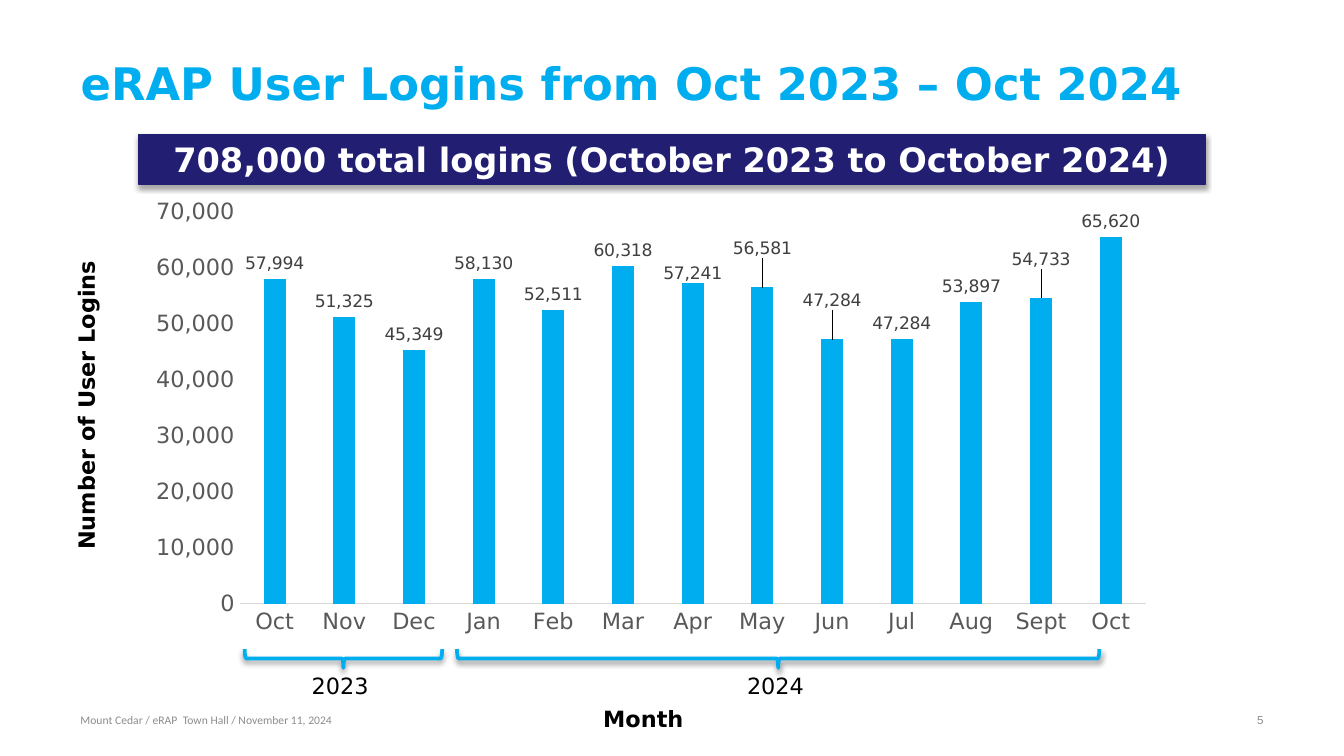
"""Build the slide of monthly eRAP user logins."""
import pptx
import pptx.chart.data
import pptx.dml.color
import pptx.enum.chart
import pptx.enum.shapes
import pptx.enum.text
import pptx.oxml
import pptx.oxml.ns
import pptx.util

Inches, Pt = pptx.util.Inches, pptx.util.Pt
ALIGN = pptx.enum.text.PP_ALIGN
ANCHOR = pptx.enum.text.MSO_ANCHOR
SHAPE = pptx.enum.shapes.MSO_SHAPE
TICK = pptx.enum.chart.XL_TICK_MARK

TITLE = "eRAP User Logins from Oct 2023 – Oct 2024"
BANNER = "708,000 total logins (October 2023 to October 2024)"
LOGINS = [
    ("Oct", 57994), ("Nov", 51325), ("Dec", 45349), ("Jan", 58130), ("Feb", 52511),
    ("Mar", 60318), ("Apr", 57241), ("May", 56581), ("Jun", 47284), ("Jul", 47284),
    ("Aug", 53897), ("Sept", 54733), ("Oct", 65620),
]
LABEL_SHIFTS = {6: 0.01, 7: -0.04, 8: -0.04, 11: -0.04}
PLOT_AREA = {"x": 0.106, "y": 0.142, "w": 0.888, "h": 0.679}
YEARS = [("2023", 2.22, 1.82, 1.47), ("2024", 5.46, 3.4, 4.78)]
BRACE_TOP, BRACE_DEPTH = 4.83, 0.14
CAPTIONS = [
    ("Month", (4.39, 5.16, 0.77, 0.3), 0),
    ("Number of User Logins", (-0.55, 2.85, 2.34, 0.34), 270),
]
FOOTERS = [
    ("Mount Cedar / eRAP  Town Hall / November 11, 2024", (0.5, 5.21, 3.17, 0.3), "Calibri", ALIGN.LEFT),
    ("5", (7.17, 5.21, 2.33, 0.3), "Arial", ALIGN.RIGHT),
]
SANS = "DejaVu Sans"
CYAN, NAVY, BLACK, WHITE = "00AEEF", "221F72", "000000", "FFFFFF"
GREY, PALE, DARK, FOOTER_GREY = "595959", "D9D9D9", "404040", "8C8C8C"


def rgb(value):
    """Return the colour for a hex string."""
    return pptx.dml.color.RGBColor.from_string(value)


def set_font(font, size, color, face=SANS, bold=False):
    """Format one font."""
    font.size, font.name, font.bold = Pt(size), face, bold
    font.color.rgb = rgb(color)


def write(shape, text, size=12, color=BLACK, face=SANS, bold=False,
          align=ALIGN.LEFT, anchor=ANCHOR.TOP, wrap=True, spacing=1):
    """Put formatted text in a shape."""
    frame = shape.text_frame
    frame.word_wrap, frame.vertical_anchor = wrap, anchor
    if not wrap:
        frame.margin_right = 0
    paragraph = frame.paragraphs[0]
    paragraph.alignment, paragraph.line_spacing = align, spacing
    run = paragraph.add_run()
    run.text = text
    set_font(run.font, size, color, face, bold)


def add_text(slide, text, box, **style):
    """Add a text box given in inches."""
    shape = slide.shapes.add_textbox(*map(Inches, box))
    write(shape, text, **style)
    return shape


def add_outlined(slide, kind, box, line, width, fill=None, alpha=38, distance=1.6):
    """Add a preset shape with a soft shadow below it."""
    shape = slide.shapes.add_shape(kind, *map(Inches, box))
    shape.line.color.rgb, shape.line.width = rgb(line), Pt(width)
    if fill:
        shape.fill.solid()
        shape.fill.fore_color.rgb = rgb(fill)
    else:
        shape.fill.background()
    shape.shadow.inherit = False
    effects = shape._element.spPr.find(pptx.oxml.ns.qn("a:effectLst"))
    effects.append(pptx.oxml.parse_xml(
        f'<a:outerShdw {pptx.oxml.ns.nsdecls("a")} blurRad="{Pt(3.1)}" dist="{Pt(distance)}" '
        f'dir="5400000" rotWithShape="0"><a:srgbClr val="{BLACK}">'
        f'<a:alpha val="{alpha * 1000}"/></a:srgbClr></a:outerShdw>'))
    return shape


def manual_layout(places, inner=False):
    """Return a chart layout element with the given fractions."""
    target = '<c:layoutTarget val="inner"/><c:xMode val="edge"/><c:yMode val="edge"/>' if inner else ""
    values = "".join(f'<c:{key} val="{value}"/>' for key, value in places.items())
    return pptx.oxml.parse_xml(
        f'<c:layout {pptx.oxml.ns.nsdecls("c")}><c:manualLayout>{target}{values}'
        '</c:manualLayout></c:layout>')


def format_labels(series):
    """Format the value labels and shift some of them without leader lines."""
    outside = pptx.enum.chart.XL_LABEL_POSITION.OUTSIDE_END
    labels = series.data_labels
    labels.show_value, labels.position = True, outside
    labels.number_format, labels.number_format_is_linked = "#,##0", False
    set_font(labels.font, 9.2, DARK)
    for index, shift in LABEL_SHIFTS.items():
        label = series.points[index].data_label
        label.position = outside
        set_font(label.font, 9.2, DARK)
        idx = series._element.xpath(f'c:dLbls/c:dLbl/c:idx[@val="{index}"]')[0]
        idx.addnext(pptx.oxml.parse_xml(
            f'<c:numFmt {pptx.oxml.ns.nsdecls("c")} formatCode="#,##0" sourceLinked="0"/>'))
        idx.addnext(manual_layout({"x": 0, "y": shift}))
    series._element.xpath("c:dLbls")[0].append(pptx.oxml.parse_xml(
        f'<c:extLst {pptx.oxml.ns.nsdecls("c")}>'
        '<c:ext uri="{CE6537A1-D6FC-4f65-9D91-7224C49458BB}" '
        'xmlns:c15="http://schemas.microsoft.com/office/drawing/2012/chart">'
        '<c15:showLeaderLines val="0"/></c:ext></c:extLst>'))


def add_login_chart(slide):
    """Add the column chart of logins by month."""
    data = pptx.chart.data.CategoryChartData(number_format="#,##0")
    data.categories = [month for month, _ in LOGINS]
    data.add_series("Series 1", [count for _, count in LOGINS])
    chart = slide.shapes.add_chart(
        pptx.enum.chart.XL_CHART_TYPE.COLUMN_CLUSTERED,
        *map(Inches, (0.98, 0.97, 7.59, 4.29)), data).chart
    chart.has_legend = chart.has_title = False
    set_font(chart.font, 10, BLACK, "Times New Roman")
    months, counts = chart.category_axis, chart.value_axis
    for axis in (months, counts):
        axis.major_tick_mark = axis.minor_tick_mark = TICK.NONE
        axis.has_major_gridlines = False
        set_font(axis.tick_labels.font, 12, GREY)
    months.format.line.color.rgb, months.format.line.width = rgb(PALE), Pt(0.75)
    counts.format.line.fill.background()
    counts.minimum_scale, counts.maximum_scale, counts.major_unit = 0, 70000, 10000
    counts.tick_labels.number_format = "#,##0"
    counts.tick_labels.number_format_is_linked = False
    plot = chart.plots[0]
    plot.gap_width, plot.vary_by_categories = 219, False
    series = plot.series[0]
    series.format.fill.solid()
    series.format.fill.fore_color.rgb = rgb(CYAN)
    format_labels(series)
    area = chart._chartSpace.xpath("c:chart/c:plotArea")[0]
    for layout in area.xpath("c:layout"):
        area.remove(layout)
    area.insert(0, manual_layout(PLOT_AREA, inner=True))


def main():
    """Build and save the slide."""
    deck = pptx.Presentation()
    deck.slide_width, deck.slide_height = Inches(10), Inches(10 * 9 / 16)
    slide = deck.slides.add_slide(deck.slide_layouts[5])
    title = slide.shapes.title
    title.left, title.top, title.width, title.height = map(Inches, (0.5, 0.36, 9, 0.51))
    write(title, TITLE, size=24, color=CYAN, bold=True, anchor=ANCHOR.MIDDLE)
    add_login_chart(slide)
    for text, box, rotation in CAPTIONS:
        add_text(slide, text, box, bold=True, wrap=False, spacing=1.2).rotation = rotation
    for text, box, face, align in FOOTERS:
        add_text(slide, text, box, size=6.2, color=FOOTER_GREY, face=face,
                 align=align, anchor=ANCHOR.MIDDLE)
    banner = add_outlined(slide, SHAPE.RECTANGLE, (1.03, 1, 7.94, 0.37), NAVY, 0.75,
                          fill=NAVY, alpha=35, distance=1.8)
    write(banner, BANNER, size=18, color=WHITE, bold=True,
          align=ALIGN.CENTER, anchor=ANCHOR.MIDDLE)
    for year, text_left, brace_left, span in YEARS:
        offset = (span - BRACE_DEPTH) / 2
        box = (brace_left + offset, BRACE_TOP - offset, BRACE_DEPTH, span)
        add_outlined(slide, SHAPE.RIGHT_BRACE, box, CYAN, 2).rotation = 90
        add_text(slide, year, (text_left, 4.91, 0.68, 0.3), wrap=False, spacing=1.2)
    deck.save("out.pptx")


if __name__ == "__main__":
    main()
